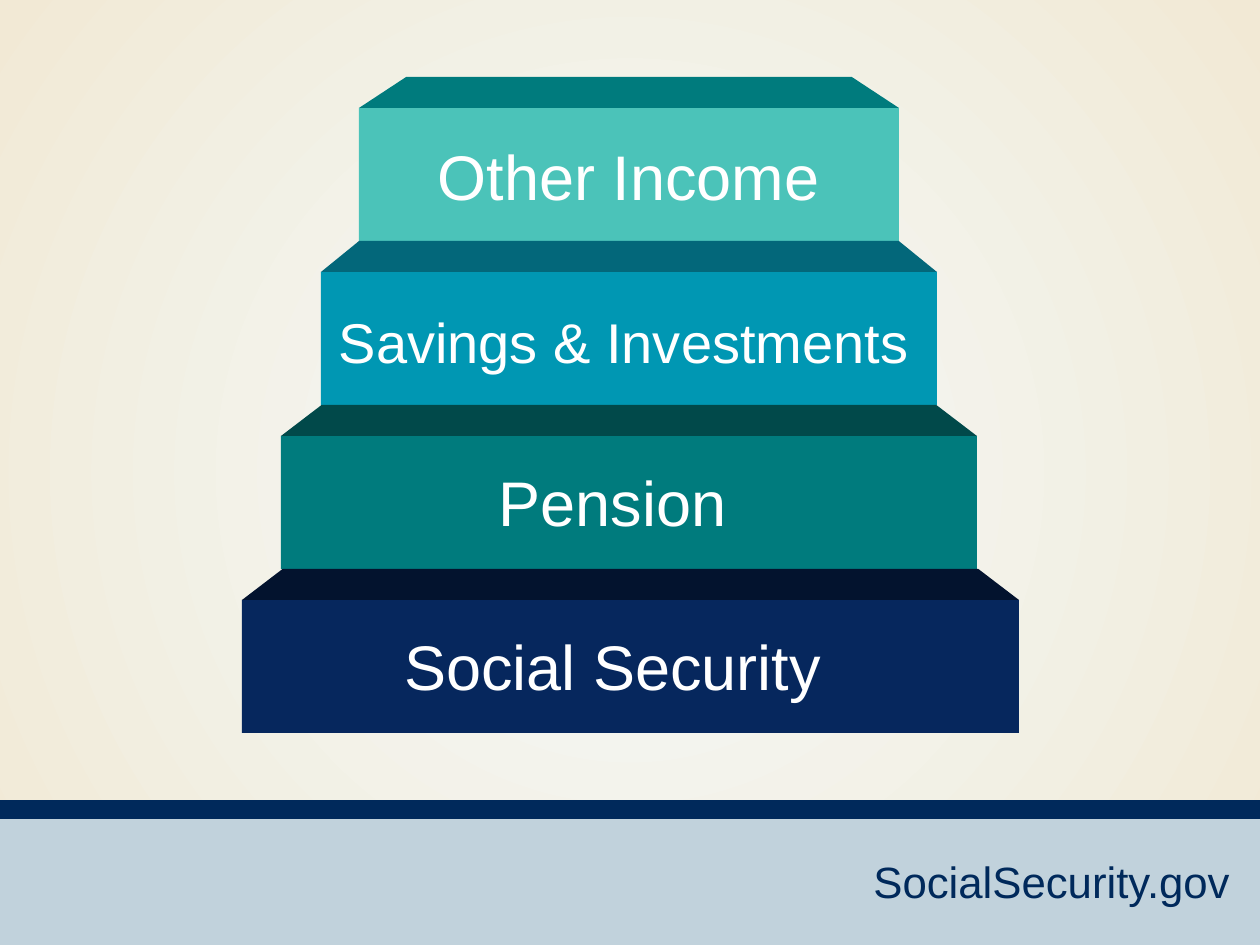
from lxml.etree import SubElement
from pptx import Presentation
from pptx.dml.color import RGBColor
from pptx.enum.shapes import MSO_SHAPE as Shape
from pptx.enum.text import MSO_AUTO_SIZE as AutoSize, PP_ALIGN as Align
from pptx.oxml.ns import qn
from pptx.util import Pt

PX = 914400 / 126
SLIDE_W, SLIDE_H = 1260, 945
FONT = "Arial"
NAVY, WHITE = "00295B", "FFFFFF"
GRADIENT = ("F3FAFB", "F2E9D5")  # centre, edge

# top, height, fill
FOOTER_BANDS = [(812, 133, "C1D2DC"), (800, 19, NAVY)]
FOOTER = ("SocialSecurity.gov", (861, 849, 387, 66), 25, NAVY)

FIRST_FRONT, PITCH, FRONT_H, LID_H = 108, 164, 133, 31
# left, width, front fill, lid fill, lid slope, label, label (left, drop, width, height), size
STEPS = [
    (359, 540, "4BC3B9", "007B7D", 1.52, "Other Income", (360, 23, 537, 89), 36),
    (321, 616, "0097B3", "03677A", 1.23, "Savings & Investments", (316, 29, 616, 81), 32),
    (281, 696, "007B7D", "01494A", 1.31, "Pension", (344, 21, 537, 89), 36),
    (242, 777, "06275D", "03132E", 1.31, "Social Security", (344, 21, 537, 89), 36),
]


def emu(*lengths):
    return [round(length * PX) for length in lengths]


def rgb(value):
    return RGBColor.from_string(value)


def add_block(slide, kind, box, color):
    block = slide.shapes.add_shape(kind, *emu(*box))
    block.shadow.inherit = False
    block.fill.solid()
    block.fill.fore_color.rgb = rgb(color)
    block.line.fill.background()
    return block


def add_label(slide, text, box, size, color, align=Align.LEFT):
    frame = slide.shapes.add_textbox(*emu(*box)).text_frame
    frame.word_wrap = True
    frame.auto_size = AutoSize.SHAPE_TO_FIT_TEXT
    paragraph = frame.paragraphs[0]
    paragraph.alignment = align
    run = paragraph.add_run()
    run.text = text
    for name, value in {"name": FONT, "size": Pt(size)}.items():
        setattr(run.font, name, value)
    run.font.color.rgb = rgb(color)


def paint_background(slide):
    """Fill the background with a gradient that spreads from the centre."""
    fill = slide.background.fill
    fill.gradient()
    for stop, color in zip(fill.gradient_stops, GRADIENT):
        stop.color.rgb = rgb(color)
    gradient = slide.element.find(".//" + qn("a:gradFill"))
    gradient.remove(gradient.find(qn("a:lin")))
    circle = SubElement(gradient, qn("a:path"), {"path": "circle"})
    SubElement(circle, qn("a:fillToRect"), dict.fromkeys("ltrb", "50000"))


def main():
    deck = Presentation()
    deck.slide_width, deck.slide_height = emu(SLIDE_W, SLIDE_H)
    slide = deck.slides.add_slide(deck.slide_layouts[6])
    paint_background(slide)

    for top, height, color in FOOTER_BANDS:
        add_block(slide, Shape.RECTANGLE, (0, top, SLIDE_W, height), color)
    add_label(slide, *FOOTER)

    for index, step in enumerate(STEPS):
        left, width, front, lid, slope, label, place, size = step
        top = FIRST_FRONT + index * PITCH
        add_block(slide, Shape.RECTANGLE, (left, top, width, FRONT_H), front)
        cover = add_block(slide, Shape.TRAPEZOID, (left, top - LID_H, width, LID_H), lid)
        cover.adjustments[0] = slope
        label_left, drop, label_w, label_h = place
        add_label(slide, label, (label_left, top + drop, label_w, label_h),
                  size, WHITE, Align.CENTER)

    deck.save("out.pptx")


if __name__ == "__main__":
    main()
